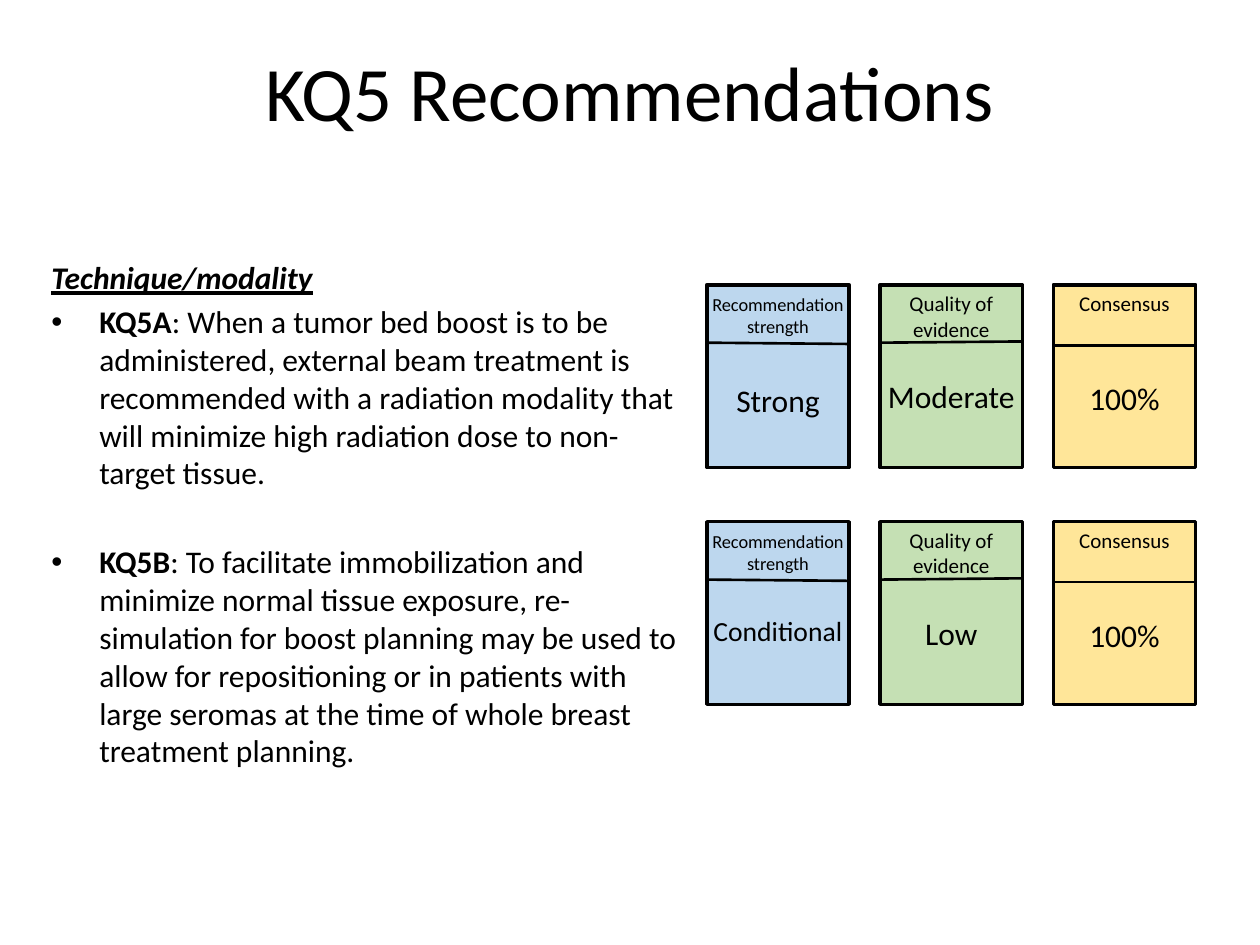
from lxml import etree
from pptx import Presentation
from pptx.dml.color import RGBColor
from pptx.enum.shapes import MSO_CONNECTOR, MSO_SHAPE
from pptx.enum.text import MSO_ANCHOR, PP_ALIGN
from pptx.oxml.ns import qn
from pptx.util import Inches, Pt

RECT = MSO_SHAPE.RECTANGLE
LINE = MSO_CONNECTOR.STRAIGHT
TOP = MSO_ANCHOR.TOP
CENTER = PP_ALIGN.CENTER
LEFT = PP_ALIGN.LEFT
BLACK = "000000"

GRID_X, GRID_Y = 5.61, 2.26
STEP_X, STEP_Y = 1.375, 1.88
CARD_W, CARD_H = 1.13, 1.45

HEADS = [
    ("Recommendation strength", 10.5, "BDD7EE", 0.07, 0.46, 0.47),
    ("Quality of evidence", 12, "C5E0B4", 0.05, 0.46, 0.45),
    ("Consensus", 12, "FFE699", 0.05, 0.48, 0.48),
]
ROWS = [
    [("Strong", 18, 0.76), ("Moderate", 18, 0.73), ("100%", 18, 0.75)],
    [("Conditional", 15.8, 0.73), ("Low", 18, 0.73), ("100%", 18, 0.75)],
]
POINTS = [
    ("KQ5A", ": When a tumor bed boost is to be administered, external beam "
     "treatment is recommended with a radiation modality that will minimize "
     "high radiation dose to non-target tissue.", 3.6),
    ("KQ5B", ": To facilitate immobilization and minimize normal tissue "
     "exposure, re-simulation for boost planning may be used to allow for "
     "repositioning or in patients with large seromas at the time of whole "
     "breast treatment planning.", 29.2),
]


def color(text):
    return RGBColor.from_string(text)


def style(para, size, align):
    para.alignment = align
    para.font.size = Pt(size)
    para.font.name = "Calibri"
    para.font.color.rgb = color(BLACK)


def add_box(shapes, x, y, w, h, side=0.1, top=0.05):
    box = shapes.add_textbox(Inches(x), Inches(y), Inches(w), Inches(h))
    frame = box.text_frame
    frame.word_wrap = True
    frame.vertical_anchor = TOP
    frame.margin_left = frame.margin_right = Inches(side)
    frame.margin_top = frame.margin_bottom = Inches(top)
    return frame


def add_label(shapes, text, size, x, y, h, top):
    para = add_box(shapes, x, y, CARD_W, h, 0.03, top).paragraphs[0]
    para.text = text
    style(para, size, CENTER)


def add_rule(shapes, x, start, end):
    rule = shapes.add_connector(LINE, Inches(x), Inches(start),
                                Inches(x + CARD_W), Inches(end))
    rule.line.color.rgb = color(BLACK)
    rule.line.width = Pt(1.5)
    etree.SubElement(rule._element.spPr, qn("a:effectLst"))


def add_card(shapes, x, y, head, value):
    title, size, fill, top, start, end = head
    card = shapes.add_shape(RECT, Inches(x), Inches(y),
                            Inches(CARD_W), Inches(CARD_H))
    card.shadow.inherit = False
    card.fill.solid()
    card.fill.fore_color.rgb = color(fill)
    card.line.color.rgb = color(BLACK)
    card.line.width = Pt(2)
    add_rule(shapes, x, y + start, y + end)
    add_label(shapes, title, size, x, y, 0.5, top)
    text, size, drop = value
    add_label(shapes, text, size, x, y + drop, 0.35, 0)


def add_title(slide):
    title = slide.shapes.title
    title.left, title.top = Inches(0.5), Inches(0.3)
    title.width, title.height = Inches(9), Inches(1.25)
    title.text_frame.vertical_anchor = TOP
    para = title.text_frame.paragraphs[0]
    para.text = "KQ5 Recommendations"
    style(para, 44, CENTER)


def add_point(frame, key, text, gap):
    para = frame.add_paragraph()
    props = para._p.get_or_add_pPr()
    props.set("marL", str(Inches(0.38)))
    props.set("indent", str(-Inches(0.38)))
    etree.SubElement(props, qn("a:buFont"), typeface="Arial")
    etree.SubElement(props, qn("a:buChar"), char="•")
    style(para, 18, LEFT)
    para.space_before = Pt(gap)
    lead = para.add_run()
    lead.text = key
    lead.font.bold = True
    para.add_run().text = text


def add_body(slide):
    frame = add_box(slide.shapes, 0.31, 2, 5.3, 3.87)
    para = frame.paragraphs[0]
    para.text = "Technique/modality"
    style(para, 18, LEFT)
    para.font.bold = para.font.italic = para.font.underline = True
    for key, text, gap in POINTS:
        add_point(frame, key, text, gap)


def main():
    deck = Presentation()
    deck.slide_width, deck.slide_height = Inches(10), Inches(7.5)
    slide = deck.slides.add_slide(deck.slide_layouts[5])
    add_title(slide)
    add_body(slide)
    for row, values in enumerate(ROWS):
        group = slide.shapes.add_group_shape()
        for col, (head, value) in enumerate(zip(HEADS, values)):
            add_card(group.shapes, GRID_X + col * STEP_X,
                     GRID_Y + row * STEP_Y, head, value)
    deck.save("out.pptx")


if __name__ == "__main__":
    main()
